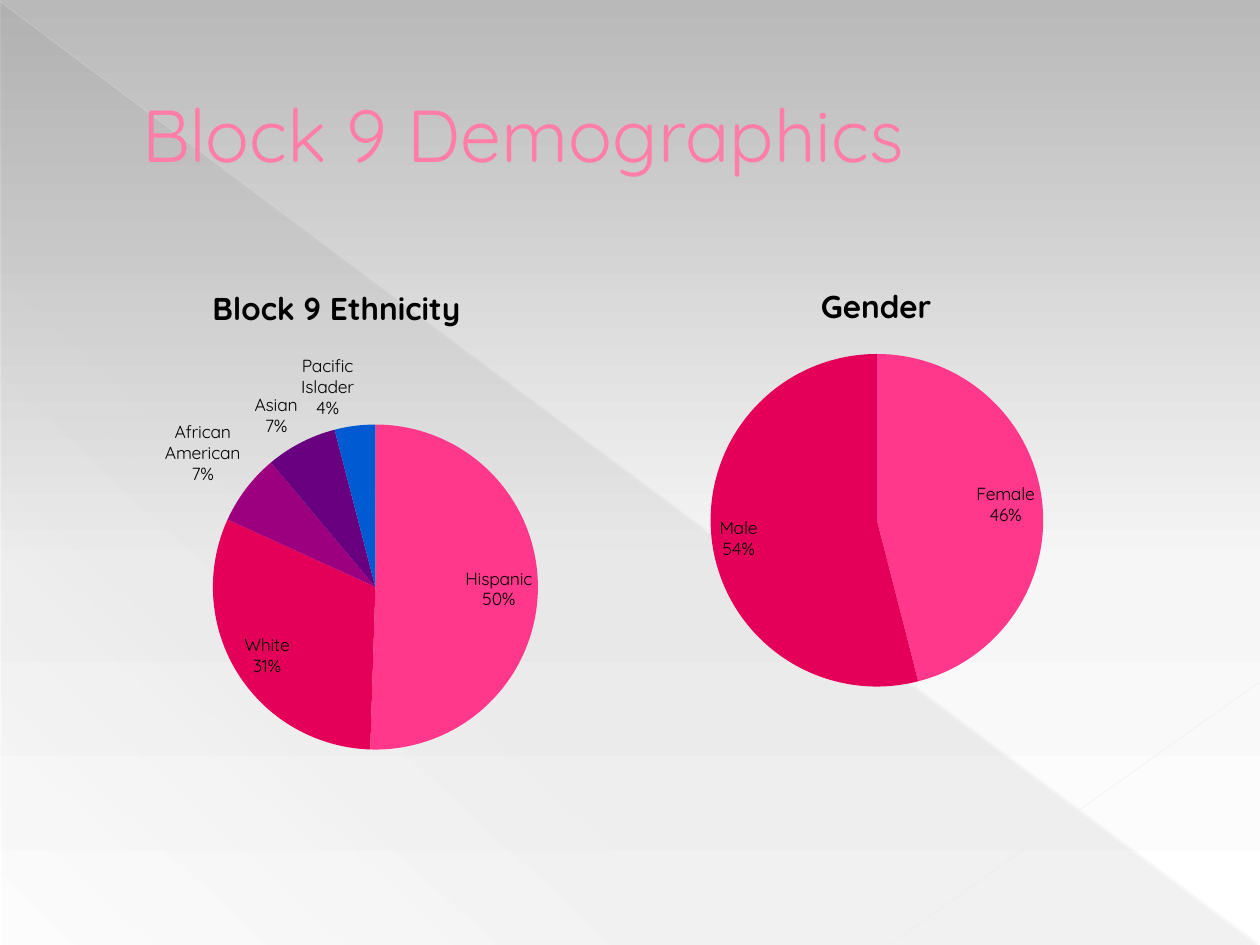
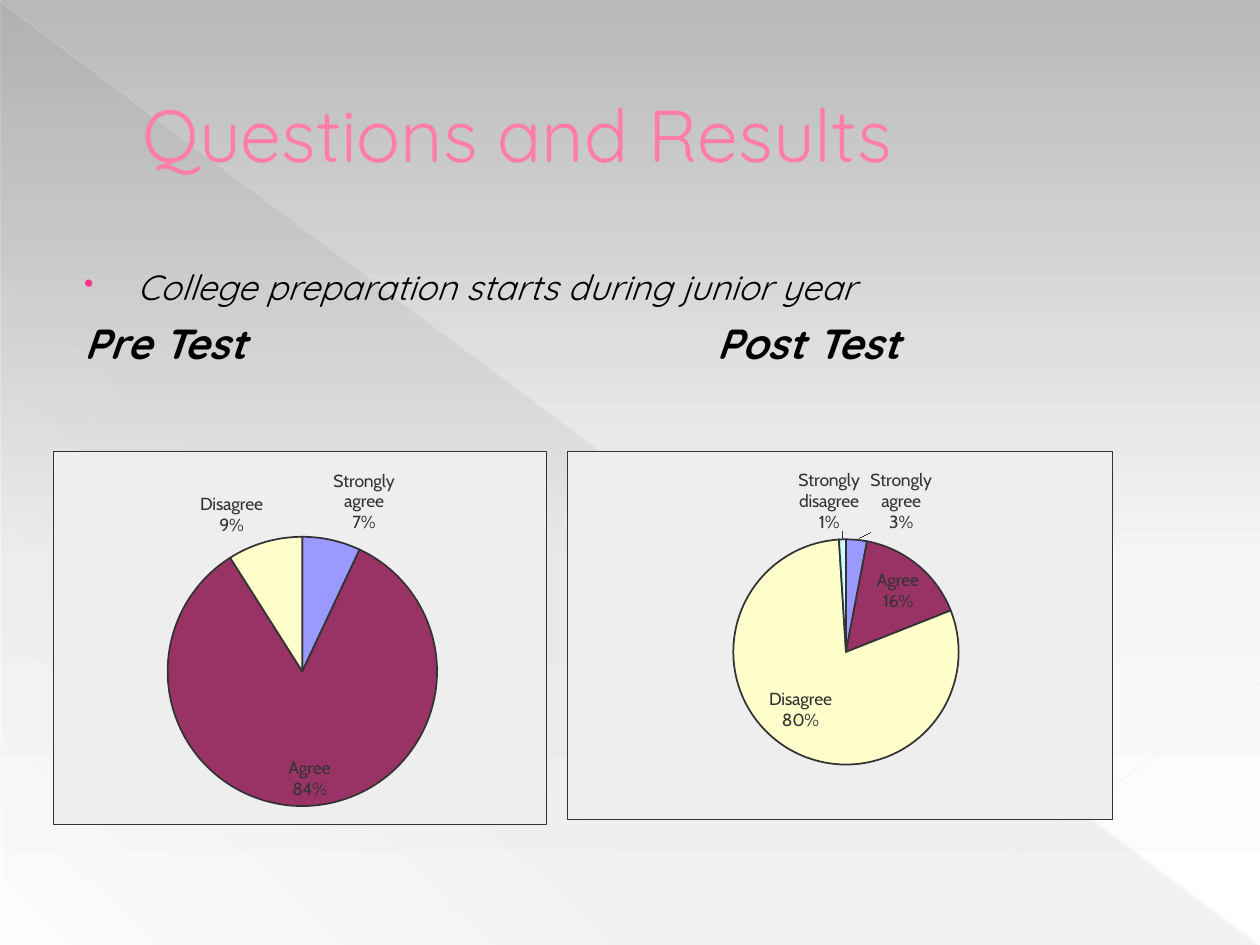
from dataclasses import dataclass

from lxml import etree
from pptx import Presentation
from pptx.chart.data import CategoryChartData
from pptx.dml.color import RGBColor
from pptx.enum import chart as charts, shapes, text
from pptx.oxml import parse_xml
from pptx.oxml.ns import nsdecls, qn
from pptx.util import Inches, Pt


@dataclass(frozen=True)
class Theme:
    font: str = "Quicksand"
    survey_font: str = "Cabin"
    title: str = "FF7DA7"
    accent: str = "FF388C"
    ink: str = "000000"
    survey_ink: str = "333333"
    survey_panel: str = "EEEEEE"
    title_size: int = 42
    question_size: int = 20
    test_size: int = 24
    chart_title_size: int = 18
    label_size: int = 10
    demographic_slices: tuple = ("FF388C", "E40059", "9C007F", "68007F", "005BD3")
    survey_slices: tuple = ("9999FF", "993366", "FFFFCC", "CCFFFF")
    backdrop: tuple = ((0, "B9B9B9", 100), (60, "F6F6F6", 100), (100, "FFFFFF", 100))
    veil: tuple = ((0, "666666", 10), (70, "666666", 8), (100, "666666", 1))


THEME = Theme()


# Fills and lines
def rgb(value):
    return RGBColor.from_string(value)


def gradient_xml(stops, angle):
    marks = "".join(
        f'<a:gs pos="{pos * 1000}"><a:srgbClr val="{color}">'
        f'<a:alpha val="{alpha * 1000}"/></a:srgbClr></a:gs>'
        for pos, color, alpha in stops)
    return parse_xml(f'<a:gradFill {nsdecls("a")} rotWithShape="1"><a:gsLst>{marks}</a:gsLst>'
                     f'<a:lin ang="{angle * 60000}" scaled="0"/></a:gradFill>')


def set_gradient(fill, owner, stops, angle):
    fill.gradient()
    plain = next(owner.iter(qn("a:gradFill")))
    plain.getparent().replace(plain, gradient_xml(stops, angle))


def add_ray(slide, start, end, color, width, alpha):
    ray = slide.shapes.add_connector(shapes.MSO_CONNECTOR.STRAIGHT,
                                     *map(Inches, start + end))
    ray.line.color.rgb = rgb(color)
    ray.line.width = Pt(width)
    properties = ray._element.spPr
    tint = next(properties.iter(qn("a:srgbClr")))
    etree.SubElement(tint, qn("a:alpha")).set("val", str(alpha * 1000))
    etree.SubElement(properties, qn("a:effectLst"))


# Shared backdrop and title
def add_backdrop(slide):
    set_gradient(slide.background.fill, slide._element, THEME.backdrop, 90)
    veil = slide.shapes.add_shape(shapes.MSO_SHAPE.RIGHT_TRIANGLE,
                                  *map(Inches, (0.01, 0.02, 9.98, 7.48)))
    veil.shadow.inherit = False
    veil.line.fill.background()
    set_gradient(veil.fill, veil._element, THEME.veil, 133)
    add_ray(slide, (0, 0.01), (9.99, 7.49), "E8E8E8", 0.39, 35)
    add_ray(slide, (10, 5.41), (7.07, 7.49), "EAEAEA", 0.47, 45)


def add_frame(slide, *box):
    frame = slide.shapes.add_textbox(*map(Inches, box)).text_frame
    frame.word_wrap = True
    return frame


def add_run(paragraph, words, size, color, bold=False, italic=False, font=THEME.font):
    run = paragraph.add_run()
    run.text = words
    run.font.name = font
    run.font.size = Pt(size)
    run.font.bold = bold
    run.font.italic = italic
    run.font.color.rgb = rgb(color)


def set_indent(paragraph, left, first=0):
    properties = paragraph._p.get_or_add_pPr()
    properties.set("marL", str(Inches(left)))
    properties.set("indent", str(Inches(first)))
    return properties


def add_title(slide, words):
    frame = add_frame(slide, 0.5, 0.29, 9, 1.53)
    frame.vertical_anchor = text.MSO_ANCHOR.MIDDLE
    heading = frame.paragraphs[0]
    set_indent(heading, 0.53)
    add_run(heading, words, THEME.title_size, THEME.title)


def start_slide(deck, title):
    slide = deck.slides.add_slide(deck.slide_layouts[6])
    add_backdrop(slide)
    add_title(slide, title)
    return slide


# Survey question and test headings
def add_question(slide, statement):
    question = add_frame(slide, 0.5, 2.06, 9, 0.45).paragraphs[0]
    properties = set_indent(question, 0.49, -0.42)
    for mark in (f'<a:buClr {nsdecls("a")}><a:srgbClr val="{THEME.accent}"/></a:buClr>',
                 f'<a:buSzPct {nsdecls("a")} val="80000"/>',
                 f'<a:buChar {nsdecls("a")} char="•"/>'):
        properties.append(parse_xml(mark))
    add_run(question, statement, THEME.question_size, THEME.ink, italic=True)


def add_test_heading(slide, left, words):
    heading = add_frame(slide, left, 2.47, 3, 0.52).paragraphs[0]
    set_indent(heading, 0.07)
    add_run(heading, words, THEME.test_size, THEME.ink, bold=True, italic=True)


# Pie charts
def layout_xml(box, left, top, size=None):
    """Turn slide inches into fractions of the chart box."""
    x, y, width, height = box
    values = {"x": (left - x) / width, "y": (top - y) / height}
    if size:
        values.update(w=size / width, h=size / height)
    target = '<c:layoutTarget val="inner"/>' if size else ""
    modes = "".join(f'<c:{key}Mode val="edge"/>' for key in "xy")
    places = "".join(f'<c:{key} val="{value:.4f}"/>' for key, value in values.items())
    return parse_xml(f'<c:layout {nsdecls("c")}><c:manualLayout>{target}{modes}{places}'
                     '</c:manualLayout></c:layout>')


def place(parent, index, layout):
    for old in parent.findall(qn("c:layout")):
        parent.remove(old)
    parent.insert(index, layout)


def area_xml(fill=None, border=None):
    def paint(color):
        return f'<a:solidFill><a:srgbClr val="{color}"/></a:solidFill>' if color else "<a:noFill/>"
    return parse_xml(f'<c:spPr {nsdecls("c", "a")}>{paint(fill)}'
                     f'<a:ln w="{Pt(0.25)}">{paint(border)}</a:ln></c:spPr>')


def label_slices(series, shares):
    labels = series.data_labels
    labels.show_percentage = True
    labels.show_category_name = True
    labels.show_value = False
    labels.number_format = "0%"
    labels.number_format_is_linked = False
    labels.position = charts.XL_LABEL_POSITION.BEST_FIT
    element = labels._element
    for old in element.findall(qn("c:separator")) + element.findall(qn("c:showLeaderLines")):
        element.remove(old)
    etree.SubElement(element, qn("c:separator")).text = "\n"
    etree.SubElement(element, qn("c:showLeaderLines")).set("val", "1")
    empty = [index for index, share in enumerate(shares) if share == 0]
    for position, index in enumerate(empty):
        element.insert(position, parse_xml(
            f'<c:dLbl {nsdecls("c")}><c:idx val="{index}"/><c:delete val="1"/></c:dLbl>'))


def word_first_label(series, lines, font, ink):
    label = series.points[0].data_label
    frame = label.text_frame
    for number, line in enumerate(lines):
        paragraph = frame.add_paragraph() if number else frame.paragraphs[0]
        add_run(paragraph, line, THEME.label_size, ink, font=font)
    label.position = charts.XL_LABEL_POSITION.BEST_FIT


def add_pie(slide, box, pie, name, shares, slices, font, ink,
            title_at=None, panel=None, outline=None, first_label=()):
    data = CategoryChartData()
    data.categories = list(shares)
    data.add_series(name, shares.values())
    chart = slide.shapes.add_chart(charts.XL_CHART_TYPE.PIE, *map(Inches, box), data).chart
    chart.has_legend = False
    chart.font.name = font
    chart.font.size = Pt(THEME.label_size)
    chart.font.color.rgb = rgb(ink)

    chart.has_title = bool(title_at)
    if title_at:
        add_run(chart.chart_title.text_frame.paragraphs[0], name,
                THEME.chart_title_size, ink, bold=True)
        place(chart.chart_title._element, 1, layout_xml(box, *title_at))

    plot = chart.plots[0]
    plot.vary_by_categories = True
    series = plot.series[0]
    for index, color in zip(range(len(shares)), slices):
        wedge = series.points[index].format
        wedge.fill.solid()
        wedge.fill.fore_color.rgb = rgb(color)
        if outline:
            wedge.line.color.rgb = rgb(outline)
            wedge.line.width = Pt(1)
        else:
            wedge.line.fill.background()
    label_slices(series, shares.values())
    if first_label:
        word_first_label(series, first_label, font, ink)

    space = chart._chartSpace
    plot_area = space.chart.plotArea
    place(plot_area, 0, layout_xml(box, *pie))
    plot_area.append(area_xml(panel))
    space.chart.addnext(area_xml(panel, outline))


def add_demographic_pie(slide, box, pie, title_at, name, shares, first_label=()):
    add_pie(slide, box, pie, name, shares, THEME.demographic_slices,
            THEME.font, THEME.ink, title_at=title_at, first_label=first_label)


def add_survey_pie(slide, box, pie, shares, first_label=()):
    add_pie(slide, box, pie, "Series 1", shares, THEME.survey_slices, THEME.survey_font,
            THEME.survey_ink, panel=THEME.survey_panel, outline=THEME.survey_ink,
            first_label=first_label)


def main():
    deck = Presentation()
    deck.slide_width, deck.slide_height = Inches(10), Inches(7.5)

    # Demographics: each pie is given as left, top, diameter
    demographics = start_slide(deck, "Block 9 Demographics")
    # The rounded shares add up to 99, so the first label is worded
    add_demographic_pie(demographics, (0.83, 2.08, 3.75, 4), (1.69, 3.37, 2.58), (1.64, 2.22),
                        "Block 9 Ethnicity",
                        {"Hispanic": 50, "White": 31, "African American": 7,
                         "Asian": 7, "Pacific Islader": 4},
                        first_label=("Hispanic", "50%"))
    add_demographic_pie(demographics, (4.17, 2.08, 5.58, 3.5), (5.64, 2.81, 2.64), (6.47, 2.2),
                        "Gender", {"Female": 46, "Male": 54})

    # Survey results
    results = start_slide(deck, "Questions and Results")
    add_question(results, "College preparation starts during junior year")
    add_test_heading(results, 0.5, "Pre Test")
    add_test_heading(results, 5.52, "Post Test")
    add_survey_pie(results, (0.42, 3.58, 3.92, 2.96), (1.33, 4.26, 2.14),
                   {"Strongly agree": 7, "Agree": 84, "Disagree": 9,
                    "Strongly Disagree": 0})
    add_survey_pie(results, (4.5, 3.58, 4.33, 2.92), (5.82, 4.28, 1.79),
                   {"Strongly agree": 3, "Agree": 16, "Disagree": 80,
                    "Strongly disagree": 1},
                   first_label=("Strongly", "agree", "3%"))

    deck.save("out.pptx")


if __name__ == "__main__":
    main()
